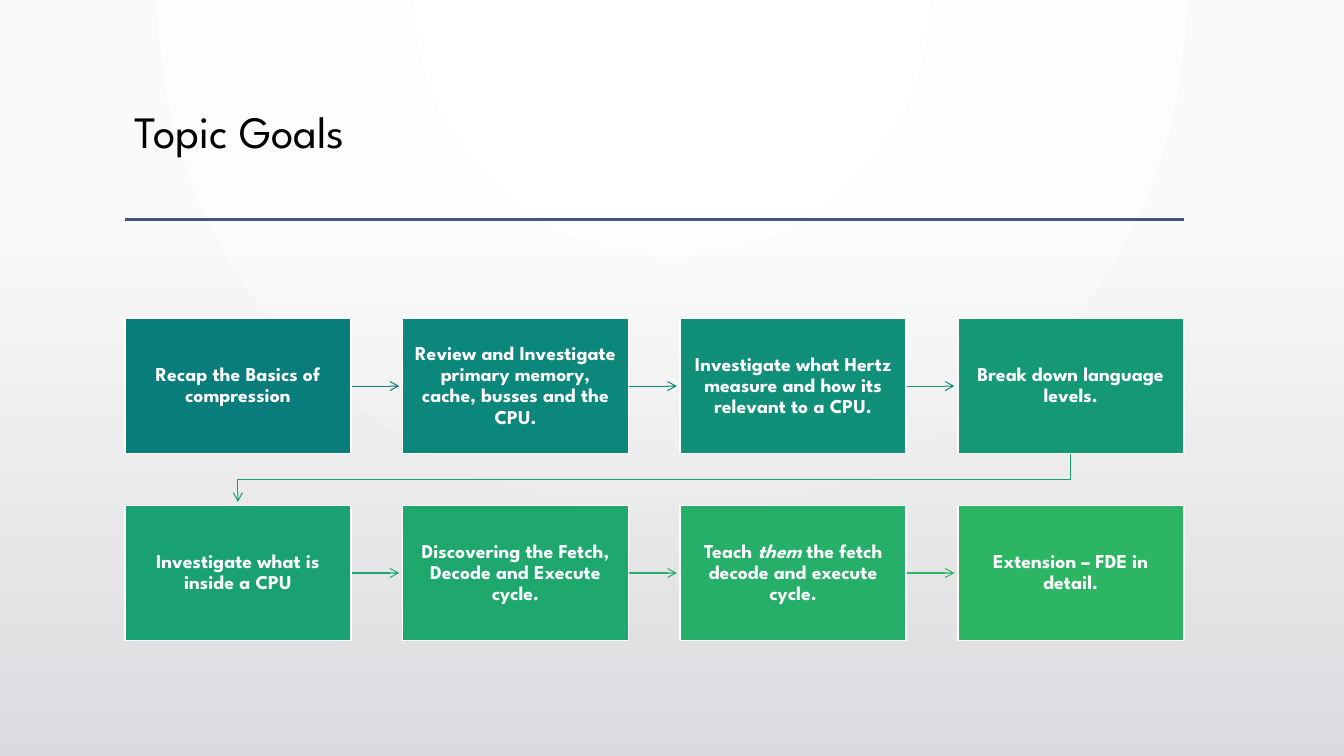
from lxml.etree import SubElement
from pptx import Presentation
from pptx.dml.color import RGBColor
from pptx.enum.shapes import MSO_CONNECTOR, MSO_SHAPE
from pptx.enum.text import MSO_ANCHOR, PP_ALIGN
from pptx.oxml.ns import qn
from pptx.util import Inches, Pt

FONT = "League Spartan"
WHITE = RGBColor(0xFF, 0xFF, 0xFF)
BLACK = RGBColor(0x00, 0x00, 0x00)
PALE = RGBColor(0xFA, 0xFA, 0xFA)
MIST = RGBColor(0xDC, 0xDC, 0xE0)
NAVY = RGBColor(0x41, 0x55, 0x88)

LEFT, WIDTH, TOP = 1.24, 10.5, 3.16
COLUMNS = 4
GOAL_W, GOAL_H = 2.24, 1.34
GAP = (WIDTH - COLUMNS * GOAL_W) / (COLUMNS - 1)
ROW_PITCH = 1.855
ARROW_LENGTH = 0.48

GOALS = [
    (["Recap the Basics of compression"], "087D7C", "087D7C"),
    (["Review and Investigate primary memory, cache, busses and the CPU."], "0C877B", "0C888B"[:4] + "7B"),
    (["Investigate what Hertz measure and how its relevant to a CPU."], "109079", "119378"),
    (["Break down language levels."], "149876", "179D74"),
    (["Investigate what is inside a CPU"], "1AA172", "1DA66F"),
    (["Discovering the Fetch, Decode and Execute cycle."], "1FA86D", "24AE69"),
    (["Teach", " them", " the fetch decode and execute cycle."], "25AF68", "2CB663"),
    (["Extension – FDE in detail."], "2CB663", None),
]


def style_line(stroke, colour, points, arrow=True):
    stroke.line.color.rgb = colour
    stroke.line.width = Pt(points)
    properties = stroke.element.spPr
    if arrow:
        SubElement(properties.find(qn("a:ln")), qn("a:tailEnd"), type="arrow")
    SubElement(properties, qn("a:effectLst"))


def add_run(paragraph, text, size, colour):
    run = paragraph.add_run()
    run.text = text
    run.font.name = FONT
    run.font.size = Pt(size)
    run.font.color.rgb = colour
    return run


prs = Presentation()
prs.slide_width, prs.slide_height = Inches(13.33), Inches(7.5)
slide = prs.slides.add_slide(prs.slide_layouts[6])
shapes = slide.shapes

glow = slide.background.fill
glow.gradient()
for stop, colour in zip(glow.gradient_stops, (WHITE, PALE)):
    stop.color.rgb = colour
gradient = slide.element.find(".//" + qn("a:gradFill"))
gradient.remove(gradient.find(qn("a:lin")))
circle = SubElement(gradient, qn("a:path"), path="circle")
SubElement(circle, qn("a:fillToRect"), l="43000", t="0", r="43000", b="100000")

haze = shapes.add_shape(MSO_SHAPE.RECTANGLE, 0, Inches(2.21), prs.slide_width, Inches(5.29))
haze.shadow.inherit = False
haze.line.fill.background()
haze.fill.gradient()
haze.fill.gradient_angle = 270
for stop in haze.fill.gradient_stops:
    stop.color.rgb = MIST
clear_colour = haze.element.spPr.find(".//" + qn("a:srgbClr"))
SubElement(clear_colour, qn("a:alpha"), val="0")

title = shapes.add_textbox(Inches(LEFT), Inches(1.04), Inches(WIDTH), Inches(1.15)).text_frame
title.word_wrap = True
title.paragraphs[0].line_spacing = 0.9
add_run(title.paragraphs[0], "Topic Goals", 32, BLACK)

rule = shapes.add_connector(MSO_CONNECTOR.STRAIGHT, Inches(LEFT), Inches(2.18),
                            Inches(LEFT + WIDTH), Inches(2.18))
style_line(rule, NAVY, 2.5, arrow=False)

for index, (words, fill, arrow_colour) in enumerate(GOALS):
    row, column = divmod(index, COLUMNS)
    x = LEFT + column * (GOAL_W + GAP)
    y = TOP + row * ROW_PITCH

    if arrow_colour:
        if column < COLUMNS - 1:
            start, middle = x + GOAL_W, Inches(y + GOAL_H / 2)
            arrow = shapes.add_connector(MSO_CONNECTOR.STRAIGHT, Inches(start), middle,
                                         Inches(start + ARROW_LENGTH), middle)
        else:
            start, end = x + GOAL_W / 2, LEFT + GOAL_W / 2
            bottom = y + GOAL_H
            turn = bottom + (ROW_PITCH - GOAL_H) / 2
            route = shapes.build_freeform(Inches(start), Inches(bottom))
            route.add_line_segments(
                [(Inches(px), Inches(py)) for px, py in
                 ((start, turn), (end, turn), (end, bottom + ARROW_LENGTH))], close=False)
            arrow = route.convert_to_shape()
            arrow.fill.background()
        style_line(arrow, RGBColor.from_string(arrow_colour), 0.75)

    goal = shapes.add_shape(MSO_SHAPE.RECTANGLE, Inches(x), Inches(y), Inches(GOAL_W), Inches(GOAL_H))
    goal.shadow.inherit = False
    goal.fill.solid()
    goal.fill.fore_color.rgb = RGBColor.from_string(fill)
    goal.line.color.rgb = WHITE
    goal.line.width = Pt(1.25)
    frame = goal.text_frame
    frame.word_wrap = True
    frame.vertical_anchor = MSO_ANCHOR.MIDDLE
    frame.margin_left = frame.margin_right = frame.margin_top = frame.margin_bottom = Inches(0.11)
    paragraph = frame.paragraphs[0]
    paragraph.alignment = PP_ALIGN.CENTER
    paragraph.line_spacing = 0.9
    for position, text in enumerate(words):
        run = add_run(paragraph, text, 14, WHITE)
        run.font.bold = True
        run.font.italic = position == 1

prs.save("out.pptx")
